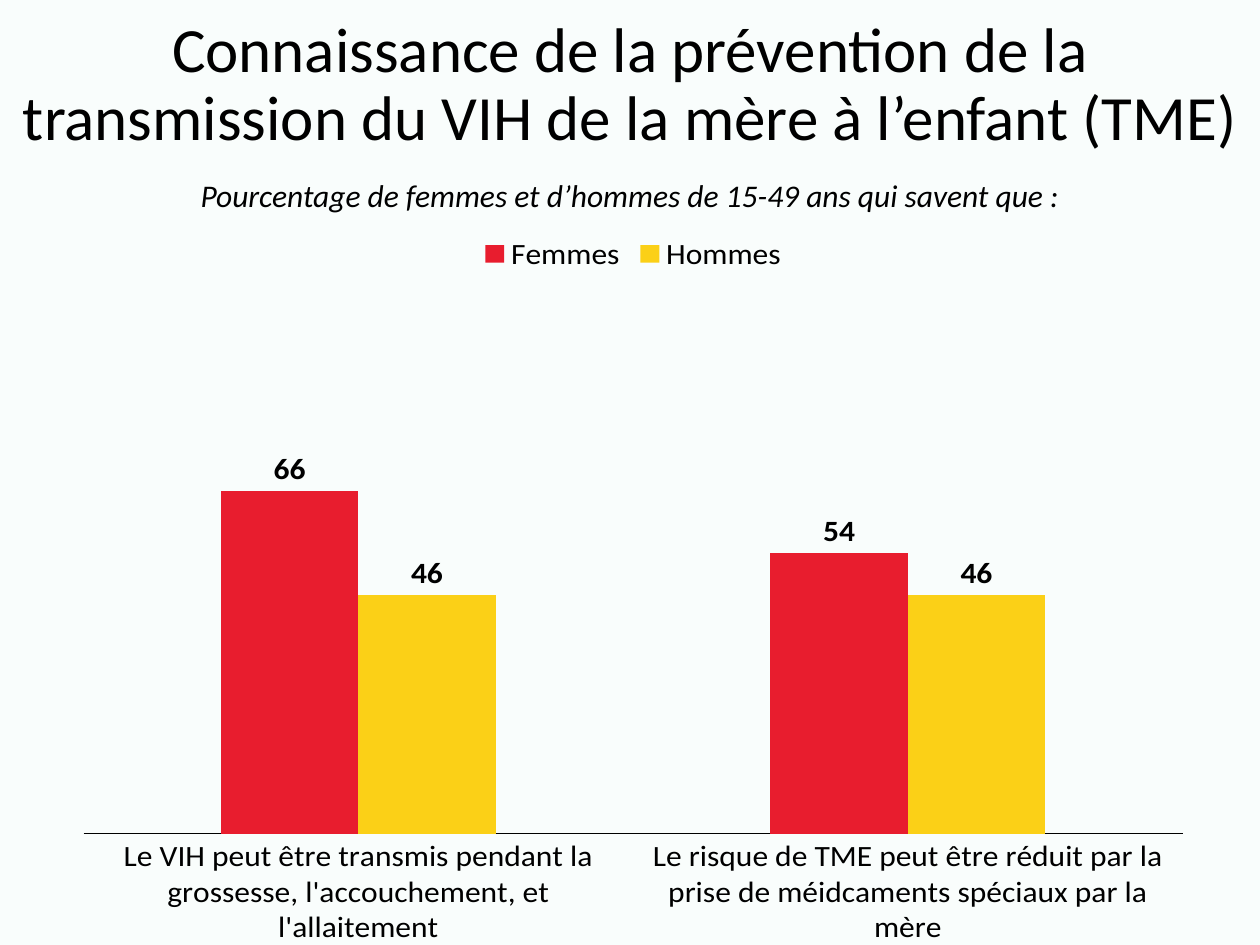
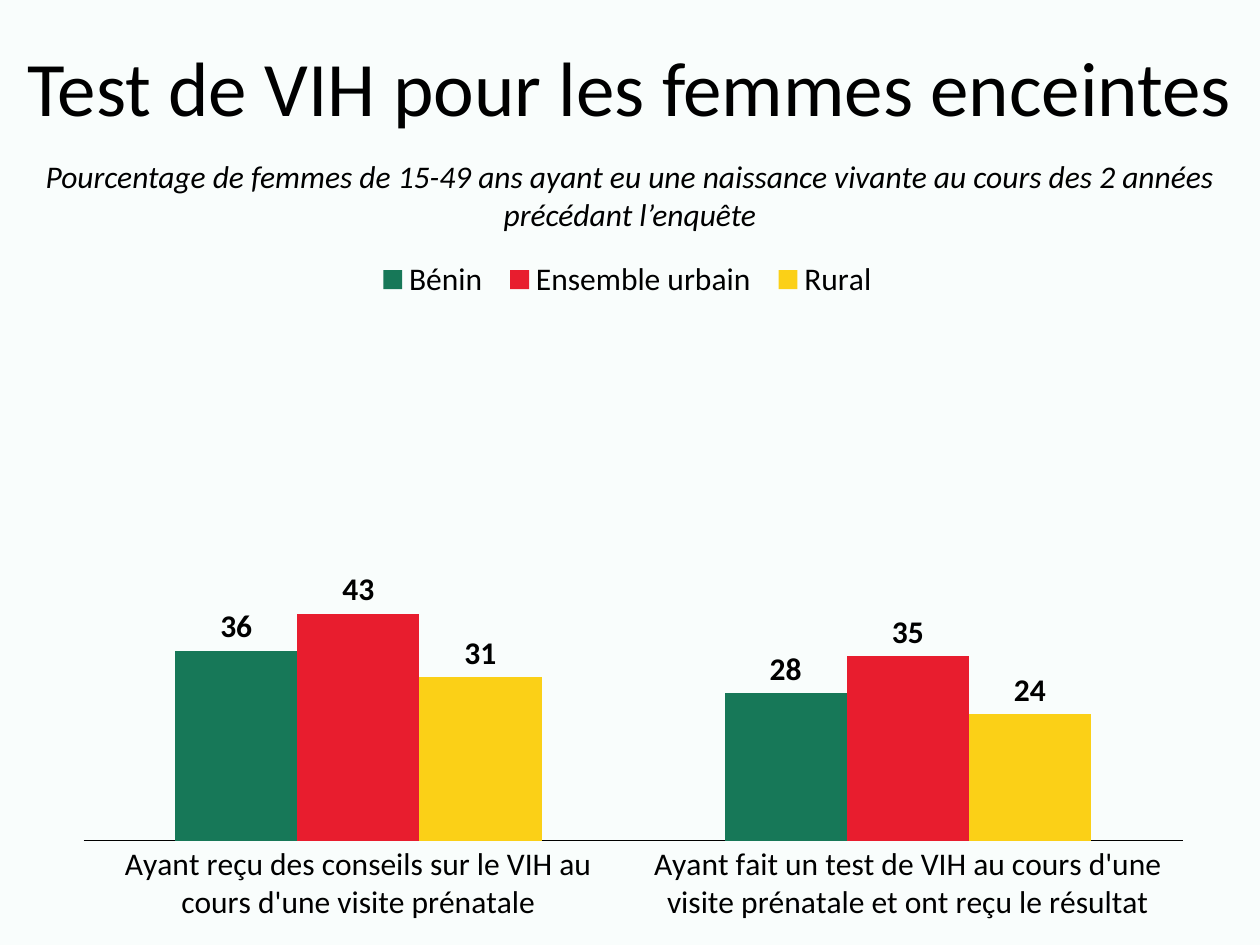
from lxml import etree
from pptx import Presentation
from pptx.chart.data import CategoryChartData
from pptx.dml.color import RGBColor
from pptx.enum.chart import XL_CHART_TYPE, XL_LABEL_POSITION, XL_LEGEND_POSITION, XL_TICK_MARK
from pptx.enum.text import MSO_ANCHOR, MSO_AUTO_SIZE, PP_ALIGN
from pptx.oxml.ns import qn
from pptx.util import Pt

BACKGROUND = RGBColor(0xF9, 0xFD, 0xFC)
BLACK = RGBColor(0, 0, 0)
GREEN = RGBColor(0x17, 0x78, 0x58)
RED = RGBColor(0xE8, 0x1D, 0x2E)
YELLOW = RGBColor(0xFB, 0xD0, 0x17)

FONT = "Calibri"
BODY_SIZE = 18
CENTER = PP_ALIGN.CENTER
MIDDLE = MSO_ANCHOR.MIDDLE
NO_AUTOFIT = MSO_AUTO_SIZE.NONE
CLUSTERED = XL_CHART_TYPE.COLUMN_CLUSTERED
OUTSIDE_END = XL_LABEL_POSITION.OUTSIDE_END
LEGEND_TOP = XL_LEGEND_POSITION.TOP
NO_TICK = XL_TICK_MARK.NONE

SLIDE_WIDTH, SLIDE_HEIGHT = 720, 540
CHART_BOX = (36.72, 126.72, 650.16, 413.28)

SLIDES = [
    {
        "title": "Connaissance de la prévention de la transmission du VIH de la mère à l’enfant (TME)",
        "title_size": 36,
        "title_box": (0, 0.72, SLIDE_WIDTH, 97.2),
        "subtitle": "Pourcentage de femmes et d’hommes de 15-49 ans qui savent que :",
        "subtitle_box": (0, 97.2, SLIDE_WIDTH, 28.8),
        "categories": [
            "Le VIH peut être transmis pendant la grossesse, l'accouchement, et l'allaitement",
            "Le risque de TME peut être réduit par la prise de méidcaments spéciaux par la mère",
        ],
        "series": [("Femmes", (66, 54), RED), ("Hommes", (46, 46), YELLOW)],
        "gap": 200,
        "plot_area": (0.017, 0.138, 0.966, 0.771),
        "legend_area": None,
    },
    {
        "title": "Test de VIH pour les femmes enceintes",
        "title_size": 44,
        "title_box": (0, 0, SLIDE_WIDTH, 104.4),
        "subtitle": "Pourcentage de femmes de 15-49 ans ayant eu une naissance vivante "
                    "au cours des 2 années précédant l’enquête",
        "subtitle_box": (0, 86.4, SLIDE_WIDTH, 51.12),
        "categories": [
            "Ayant reçu des conseils sur le VIH au cours d'une visite prénatale",
            "Ayant fait un test de VIH au cours d'une visite prénatale et ont reçu le résultat",
        ],
        "series": [
            ("Bénin", (36, 28), GREEN),
            ("Ensemble urbain", (43, 35), RED),
            ("Rural", (31, 24), YELLOW),
        ],
        "gap": 150,
        "plot_area": (0.017, 0.126, 0.966, 0.73),
        "legend_area": (0.265, 0.045, 0.46, 0.07),
    },
]


def points(box):
    return [Pt(length) for length in box]


def style_font(font, size, bold=False, italic=False):
    font.name = FONT
    font.size = Pt(size)
    font.bold = bold
    font.italic = italic
    font.color.rgb = BLACK


def fill_text(shape, text, size, italic=False):
    shape.text_frame.word_wrap = True
    shape.text_frame.text = text
    paragraph = shape.text_frame.paragraphs[0]
    paragraph.alignment = CENTER
    style_font(paragraph.font, size, italic=italic)
    return paragraph


def add_title(slide, text, size, box):
    title = slide.shapes.title
    title.left, title.top, title.width, title.height = points(box)
    paragraph = fill_text(title, text, size)
    paragraph.line_spacing = 0.9
    title.text_frame.vertical_anchor = MIDDLE
    title.text_frame.auto_size = NO_AUTOFIT


def set_layout(element, area, inner=False):
    for previous in element.findall(qn("c:layout")):
        element.remove(previous)
    layout = etree.Element(qn("c:layout"))
    manual = etree.SubElement(layout, qn("c:manualLayout"))
    settings = [("layoutTarget", "inner")] if inner else []
    settings += [("xMode", "edge"), ("yMode", "edge")]
    settings += zip("xywh", area)
    for tag, value in settings:
        etree.SubElement(manual, qn(f"c:{tag}")).set("val", str(value))
    position = element.find(qn("c:legendPos"))
    if position is None:
        element.insert(0, layout)
    else:
        position.addnext(layout)


def add_column_chart(slide, content):
    data = CategoryChartData(number_format="0")
    data.categories = content["categories"]
    for name, values, _ in content["series"]:
        data.add_series(name, values)
    chart = slide.shapes.add_chart(CLUSTERED, *points(CHART_BOX), data).chart
    style_font(chart.font, 10)
    chart.has_title = False

    chart.has_legend = True
    chart.legend.position = LEGEND_TOP
    chart.legend.include_in_layout = False
    style_font(chart.legend.font, BODY_SIZE)

    value_axis = chart.value_axis
    value_axis.minimum_scale, value_axis.maximum_scale = 0, 100
    value_axis.has_major_gridlines = False
    value_axis.visible = False

    category_axis = chart.category_axis
    category_axis.major_tick_mark = NO_TICK
    category_axis.minor_tick_mark = NO_TICK
    category_axis.format.line.color.rgb = BLACK
    category_axis.format.line.width = Pt(0.75)
    style_font(category_axis.tick_labels.font, BODY_SIZE)

    plot = chart.plots[0]
    plot.gap_width = content["gap"]
    plot.overlap = 0
    plot.vary_by_categories = False
    for series, (_, _, color) in zip(plot.series, content["series"]):
        series.format.fill.solid()
        series.format.fill.fore_color.rgb = color
        labels = series.data_labels
        labels.show_value = True
        labels.position = OUTSIDE_END
        style_font(labels.font, BODY_SIZE, bold=True)

    chart_element = chart.element.find(qn("c:chart"))
    set_layout(chart_element.find(qn("c:plotArea")), content["plot_area"], inner=True)
    if content["legend_area"]:
        set_layout(chart_element.find(qn("c:legend")), content["legend_area"])


def main():
    presentation = Presentation()
    presentation.slide_width, presentation.slide_height = Pt(SLIDE_WIDTH), Pt(SLIDE_HEIGHT)
    background = presentation.slide_master.background.fill
    background.solid()
    background.fore_color.rgb = BACKGROUND
    title_only = presentation.slide_layouts.get_by_name("Title Only")
    for content in SLIDES:
        slide = presentation.slides.add_slide(title_only)
        add_title(slide, content["title"], content["title_size"], content["title_box"])
        add_column_chart(slide, content)
        subtitle = slide.shapes.add_textbox(*points(content["subtitle_box"]))
        fill_text(subtitle, content["subtitle"], BODY_SIZE, italic=True)
    presentation.save("out.pptx")


if __name__ == "__main__":
    main()
